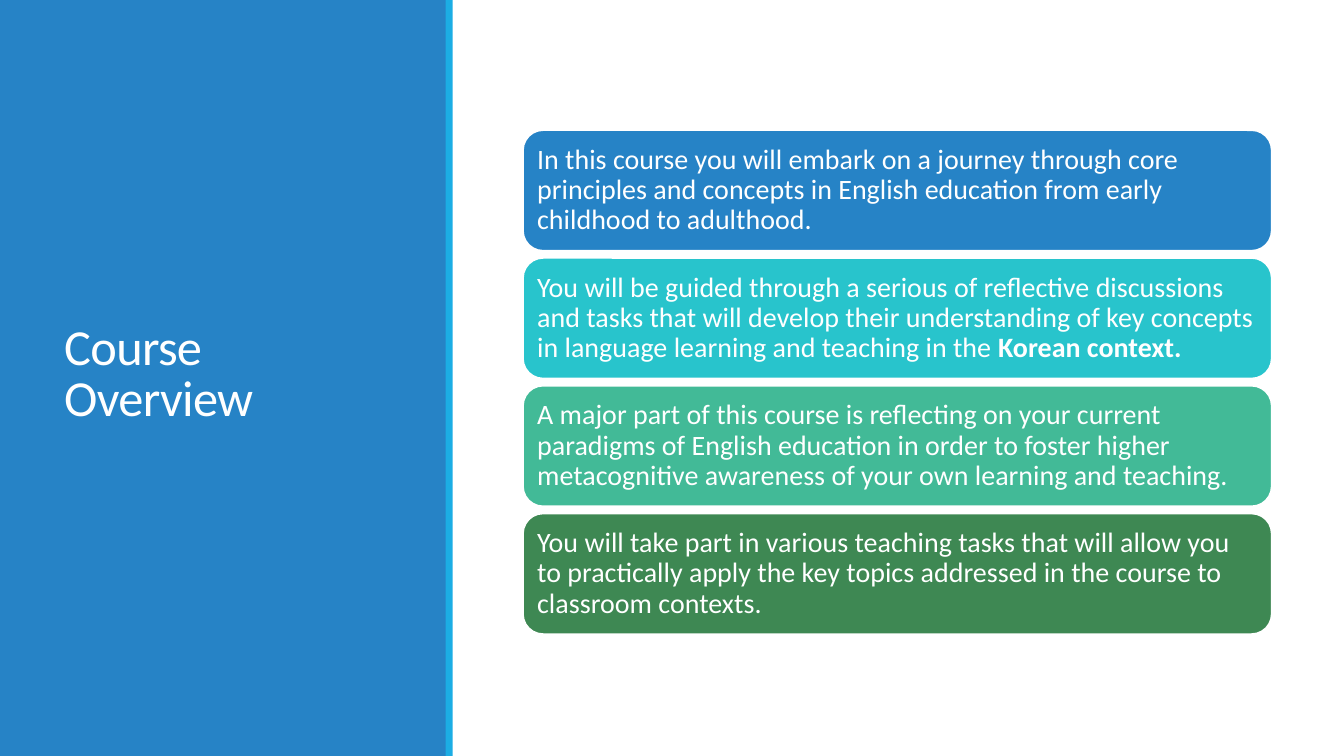
from pptx import Presentation
from pptx.dml.color import RGBColor
from pptx.enum.shapes import MSO_SHAPE
from pptx.enum.text import MSO_ANCHOR, PP_ALIGN
from pptx.util import Cm, Pt

RECTANGLE = MSO_SHAPE.RECTANGLE
ROUNDED = MSO_SHAPE.ROUNDED_RECTANGLE
MIDDLE = MSO_ANCHOR.MIDDLE
LEFT = PP_ALIGN.LEFT

COLORS = {
    "white": "FFFFFF",
    "blue": "2683C6",
    "sky": "1CADE4",
    "cyan": "28C4CC",
    "mint": "42BA97",
    "green": "3E8853",
}

# Each card: fill colour, then (text, bold) spans
CARDS = [
    ("blue", [("In this course you will embark on a journey through core principles "
               "and concepts in English education from early childhood to adulthood.", False)]),
    ("cyan", [("You will be guided through a serious of reflective discussions and tasks "
               "that will develop their understanding of key concepts in language learning "
               "and teaching in the ", False),
              ("Korean context.", True)]),
    ("mint", [("A major part of this course is reflecting on your current paradigms of "
               "English education in order to foster higher metacognitive awareness of "
               "your own learning and teaching.", False)]),
    ("green", [("You will take part in various teaching tasks that will allow you to "
                "practically apply the key topics addressed in the course to classroom "
                "contexts.", False)]),
]
CARD_TOP, CARD_HEIGHT, CARD_PITCH = 3.28, 3.04, 3.22


class SlideBuilder:
    font = "Calibri"
    text_color = "white"

    def __init__(self, page):
        self.page = page

    def color(self, name):
        return RGBColor.from_string(COLORS[name])

    def shape(self, kind, left, top, width, height, fill):
        box = self.page.shapes.add_shape(kind, Cm(left), Cm(top), Cm(width), Cm(height))
        box.shadow.inherit = False
        box.fill.solid()
        box.fill.fore_color.rgb = self.color(fill)
        box.line.fill.background()
        return box

    def fill_text(self, box, spans, size, line_spacing, tracking=0):
        frame = box.text_frame
        frame.word_wrap = True
        frame.vertical_anchor = MIDDLE
        para = frame.paragraphs[0]
        para.alignment = LEFT
        para.line_spacing = line_spacing
        for text, bold in spans:
            span = para.add_run()
            span.text = text
            span.font.name = self.font
            span.font.size = Pt(size)
            span.font.bold = bold
            span.font.color.rgb = self.color(self.text_color)
            if tracking:
                span._r.get_or_add_rPr().set("spc", str(tracking))

    def title(self, text, left, top, width, height):
        box = self.page.shapes.add_textbox(Cm(left), Cm(top), Cm(width), Cm(height))
        self.fill_text(box, [(text, False)], 36, 0.85, tracking=-50)

    def card(self, left, top, width, height, fill, spans):
        box = self.shape(ROUNDED, left, top, width, height, fill)
        box.line.color.rgb = self.color("white")
        box.line.width = Pt(1.25)
        frame = box.text_frame
        frame.margin_left = frame.margin_right = Cm(0.21)
        frame.margin_top = frame.margin_bottom = Cm(0.21)
        self.fill_text(box, spans, 20, 0.9)


def main():
    deck = Presentation()
    deck.slide_width, deck.slide_height = Cm(33.87), Cm(19.05)
    builder = SlideBuilder(deck.slides.add_slide(deck.slide_layouts[6]))

    # Title panel with its accent stripe
    builder.shape(RECTANGLE, 0, 0, 11.25, 19.05, "blue")
    builder.title("Course Overview", 1.37, 1.45, 8.56, 16.03)
    builder.shape(RECTANGLE, 11.23, 0, 0.18, 19.05, "sky")

    # Stack of cards
    for index, (fill, spans) in enumerate(CARDS):
        builder.card(13.18, CARD_TOP + index * CARD_PITCH, 18.87, CARD_HEIGHT, fill, spans)

    deck.save("out.pptx")


if __name__ == "__main__":
    main()
